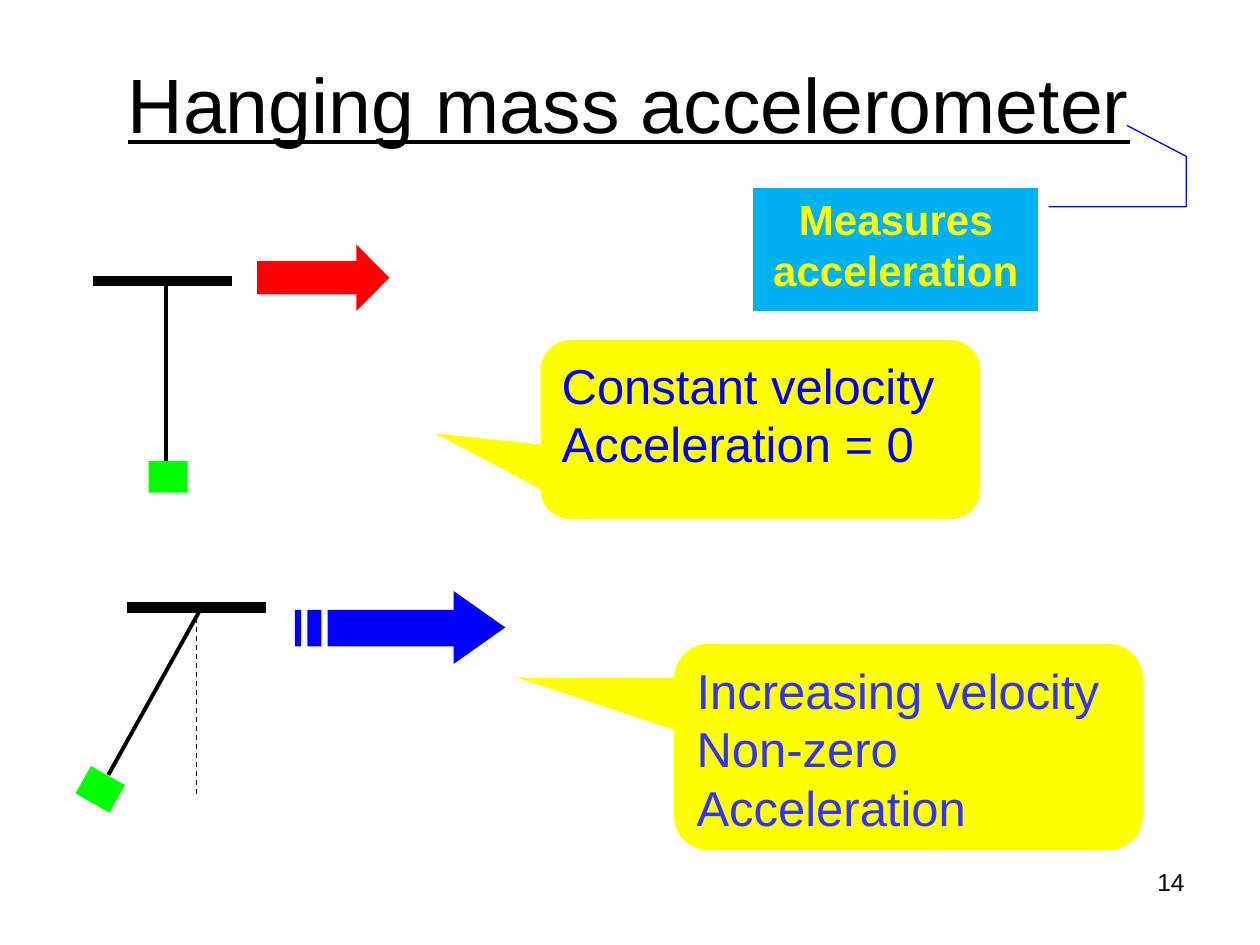
"""Build the hanging mass accelerometer slide."""
import pptx
import pptx.util
import pptx.dml.color
import pptx.enum.dml
import pptx.enum.shapes
import pptx.enum.text
import pptx.oxml

Inches = pptx.util.Inches
SHAPE = pptx.enum.shapes.MSO_SHAPE
ALIGN = pptx.enum.text.PP_ALIGN
ANCHOR = pptx.enum.text.MSO_ANCHOR
COLORS = {
    "black": "000000", "red": "FF0000", "green": "00FF00", "blue": "0000FF",
    "indigo": "3333FF", "yellow": "FFFF00", "sky": "00B0F0",
}


def color(name):
    return pptx.dml.color.RGBColor.from_string(COLORS[name])


def paint(sp, fill, line=None):
    sp.shadow.inherit = False
    sp.fill.solid()
    sp.fill.fore_color.rgb = color(fill)
    if line:
        sp.line.color.rgb = color(line)
        sp.line.width = pptx.util.Pt(0.75)
    else:
        sp.line.fill.background()


def write_text(sp, lines, size, ink, align=ALIGN.LEFT, anchor=ANCHOR.TOP,
               bold=False, underline=False):
    tf = sp.text_frame
    tf.word_wrap = True
    tf.vertical_anchor = anchor
    for i, text in enumerate(lines):
        p = tf.add_paragraph() if i else tf.paragraphs[0]
        p.alignment = align
        r = p.add_run()
        r.text = text
        r.font.name = "Arial"
        r.font.size = pptx.util.Pt(size)
        r.font.bold = bold
        r.font.underline = underline
        r.font.color.rgb = color(ink)


def add_text(s, box, lines, size, ink, **fmt):
    sp = s.shapes.add_textbox(*map(Inches, box))
    write_text(sp, lines, size, ink, **fmt)


def add_shape(s, kind, box, fill, line=None, adjustments=(), rotation=0):
    sp = s.shapes.add_shape(kind, *map(Inches, box))
    for i, value in enumerate(adjustments):
        sp.adjustments[i] = value
    sp.rotation = rotation
    paint(sp, fill, line)
    return sp


def add_line(s, start, end, width, dashed=False):
    c = s.shapes.add_connector(pptx.enum.shapes.MSO_CONNECTOR.STRAIGHT,
                               *map(Inches, start + end))
    c.line.color.rgb = color("black")
    c.line.width = pptx.util.Pt(width)
    if dashed:
        c.line.dash_style = pptx.enum.dml.MSO_LINE.DASH
    c._element.spPr.append(pptx.oxml.parse_xml(
        '<a:effectLst xmlns:a="http://schemas.openxmlformats.org/drawingml/2006/main"/>'))


def add_pendulum(s, bar_left, bar_y, pivot, bob, mass, rotation=0):
    add_line(s, (bar_left, bar_y), (bar_left + 1.1, bar_y), 6)
    add_line(s, pivot, bob, 2.25)
    add_shape(s, SHAPE.RECTANGLE, mass + (0.31, 0.25), "green", rotation=rotation)


def add_freeform(s, outlines, fill):
    first, *rest = [[(Inches(x), Inches(y)) for x, y in outline]
                    for outline in outlines]
    fb = s.shapes.build_freeform(*first[0])
    fb.add_line_segments(first[1:], close=True)
    for outline in rest:
        fb.move_to(*outline[0])
        fb.add_line_segments(outline[1:], close=True)
    paint(fb.convert_to_shape(), fill)


def add_striped_arrow(s):
    top, bottom = 4.84, 5.13
    stripes = [[(x, top), (x, bottom), (x + w, bottom), (x + w, top)]
               for x, w in ((2.44, 0.11), (2.34, 0.05))]
    arrow = [(3.6, 4.69), (3.6, top), (2.6, top), (2.6, bottom),
             (3.6, bottom), (3.6, 5.27), (4.01, 4.98)]
    add_freeform(s, [arrow] + stripes, "blue")


def add_callout(s, box, pointer, lines, ink):
    sp = add_shape(s, SHAPE.ROUNDED_RECTANGULAR_CALLOUT, box, "yellow",
                   adjustments=pointer + (0.167,))
    write_text(sp, lines, 28, ink)


def main():
    prs = pptx.Presentation()
    prs.slide_width, prs.slide_height = Inches(10), Inches(7.5)
    s = prs.slides.add_slide(prs.slide_layouts[6])

    add_text(s, (0.49, 0.24, 9, 1.15), ["Hanging mass accelerometer"], 44, "black",
             align=ALIGN.CENTER, anchor=ANCHOR.MIDDLE, underline=True)

    add_pendulum(s, 0.74, 2.23, (1.32, 2.23), (1.32, 3.69), (1.18, 3.66))
    add_shape(s, SHAPE.RIGHT_ARROW, (2.04, 1.94, 1.05, 0.53), "red",
              adjustments=(0.5, 0.495))

    add_pendulum(s, 1.01, 4.82, (1.6, 4.82), (0.86, 6.15), (0.64, 6.14), 29.4)
    add_line(s, (1.56, 4.83), (1.56, 6.31), 0.75, dashed=True)
    add_striped_arrow(s)

    add_callout(s, (4.29, 2.7, 3.49, 1.42), (-0.739, 0.022),
                ["Constant velocity", "Acceleration = 0"], "blue")
    add_callout(s, (5.35, 5.11, 3.72, 1.64), (-0.837, -0.337),
                ["Increasing velocity", "Non-zero Acceleration"], "indigo")
    sp = add_shape(s, SHAPE.LINE_CALLOUT_3_NO_BORDER, (5.98, 1.49, 2.26, 0.98),
                   "sky", "blue",
                   (0.154, 1.037, 0.154, 1.52, -0.255, 1.52, -0.505, 1.312))
    write_text(sp, ["Measures", "acceleration"], 24, "yellow",
               align=ALIGN.CENTER, bold=True)

    add_text(s, (7.17, 6.83, 2.33, 0.52), ["14"], 14, "black", align=ALIGN.RIGHT)
    prs.save("out.pptx")


if __name__ == "__main__":
    main()
